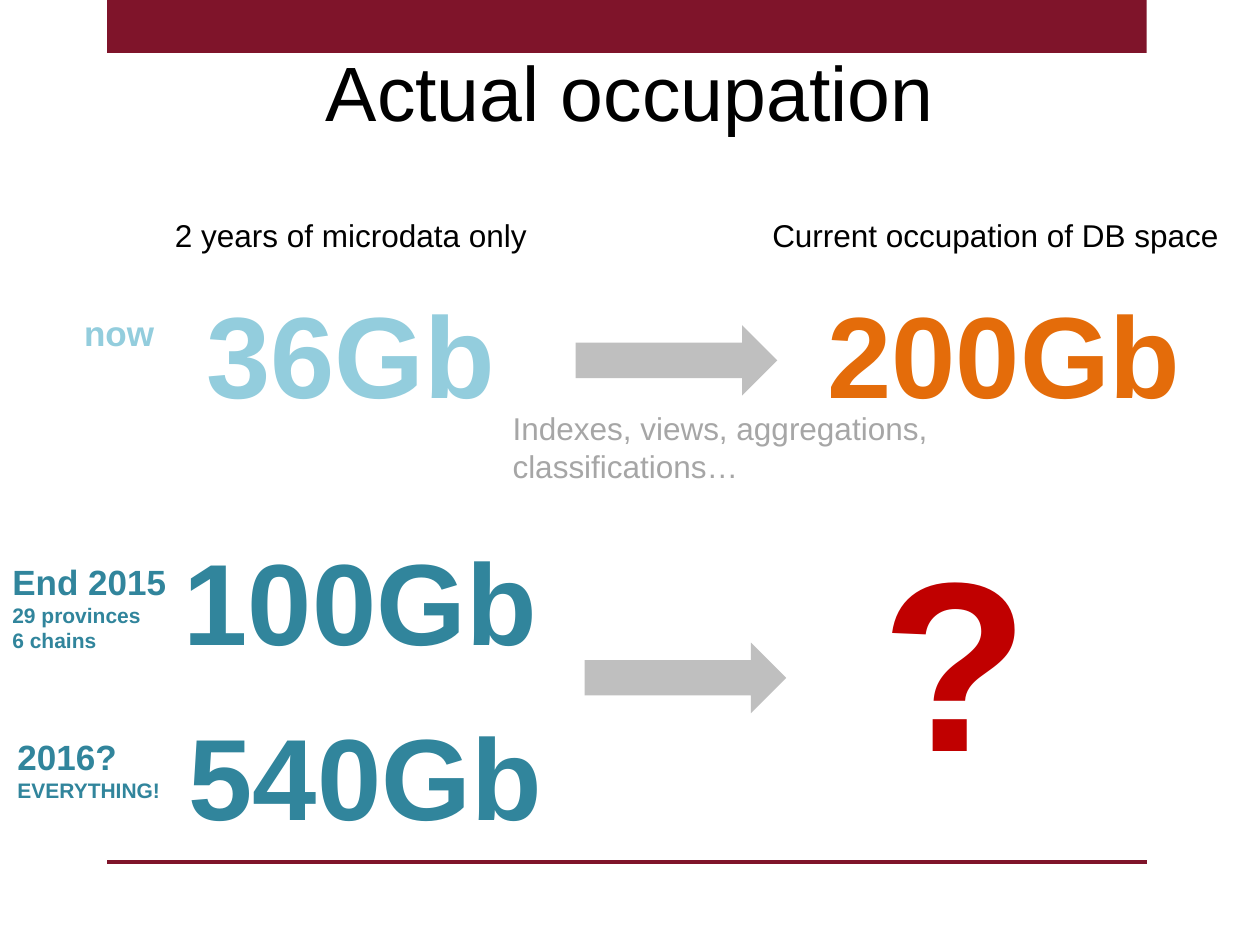
from dataclasses import dataclass

from lxml.etree import SubElement
from pptx import Presentation
from pptx.dml.color import RGBColor as Color
from pptx.enum.shapes import MSO_CONNECTOR as Connector, MSO_SHAPE as Preset
from pptx.enum.text import MSO_ANCHOR as Anchor, MSO_AUTO_SIZE as AutoSize, PP_ALIGN as Align
from pptx.oxml.ns import qn
from pptx.util import Pt

COLORS = {
    "black": "000000",
    "wine": "7F142A",
    "sky": "93CDDD",
    "teal": "31859C",
    "orange": "E46C0A",
    "red": "C00000",
    "silver": "BFBFBF",
    "gray": "A6A6A6",
}
BAND_LEFT, BAND_WIDTH = 61.2, 594


@dataclass(frozen=True)
class Line:
    text: str
    size: float


@dataclass(frozen=True)
class Label:
    left: float
    top: float
    width: float
    height: float
    lines: tuple[Line, ...]
    color: str
    bold: bool = True
    wrap: bool = False


LABELS = (
    Label(92.9, 120.2, 217.4, 28.8, (Line("2 years of microdata only", 18),), "black", False),
    Label(434.2, 120.2, 272.2, 28.8, (Line("Current occupation of DB space", 18),), "black", False),
    Label(110.9, 158.4, 181.4, 87.1, (Line("36Gb", 66),), "sky"),
    Label(465.8, 158.4, 218.2, 87.1, (Line("200Gb", 66),), "orange"),
    Label(97.9, 299.5, 218.2, 87.1, (Line("100Gb", 66),), "teal"),
    Label(100.8, 399.6, 218.2, 87.1, (Line("540Gb", 66),), "teal"),
    Label(41, 174.2, 54.7, 31.7, (Line("now", 20),), "sky"),
    Label(0, 316.8, 103, 60.5,
          (Line("End 2015", 20), Line("29 provinces", 12), Line("6 chains", 12)), "teal"),
    Label(2.9, 416.9, 97.2, 46.1, (Line("2016?", 20), Line("EVERYTHING!", 12)), "teal"),
    Label(496.8, 288, 90.7, 174.2, (Line("?", 138),), "red", wrap=True),
    Label(285.8, 230.4, 284.4, 51.1,
          (Line("Indexes, views, aggregations, classifications…", 18),), "gray", False, True),
)
ARROWS = ((329, 185.8), (334.1, 367.2))


def rgb(name: str) -> Color:
    return Color.from_string(COLORS[name])


def format_font(font, size: float, color: str, bold: bool) -> None:
    for name, value in {"name": "Arial", "size": Pt(size), "bold": bold}.items():
        setattr(font, name, value)
    font.color.rgb = rgb(color)


def place(shape, left: float, top: float, width: float, height: float) -> None:
    bounds = {"left": left, "top": top, "width": width, "height": height}
    for name, value in bounds.items():
        setattr(shape, name, Pt(value))


def add_title(slide, text: str) -> None:
    title = slide.shapes.title
    place(title, 36, 21.6, 648, 90)
    title.text_frame.vertical_anchor = Anchor.TOP
    para = title.text_frame.paragraphs[0]
    para.alignment = Align.CENTER
    span = para.add_run()
    span.text = text
    format_font(span.font, 44, "black", False)


def add_block(slide, preset: Preset, left: float, top: float,
              width: float, height: float, color: str) -> None:
    block = slide.shapes.add_shape(preset, Pt(left), Pt(top), Pt(width), Pt(height))
    block.shadow.inherit = False
    block.fill.solid()
    block.fill.fore_color.rgb = rgb(color)
    block.line.fill.background()


def add_rule(slide, top: float) -> None:
    rule = slide.shapes.add_connector(
        Connector.STRAIGHT, Pt(BAND_LEFT), Pt(top), Pt(BAND_LEFT + BAND_WIDTH), Pt(top))
    rule.line.color.rgb = rgb("wine")
    rule.line.width = Pt(2)
    SubElement(rule._element.spPr, qn("a:effectLst"))


def add_label(slide, label: Label) -> None:
    box = slide.shapes.add_textbox(
        Pt(label.left), Pt(label.top), Pt(label.width), Pt(label.height))
    frame = box.text_frame
    frame.word_wrap = label.wrap
    frame.auto_size = AutoSize.SHAPE_TO_FIT_TEXT
    for index, line in enumerate(label.lines):
        para = frame.add_paragraph() if index else frame.paragraphs[0]
        span = para.add_run()
        span.text = line.text
        format_font(span.font, line.size, label.color, label.bold)


def main() -> None:
    deck = Presentation()
    deck.slide_width, deck.slide_height = Pt(720), Pt(540)
    page = deck.slides.add_slide(deck.slide_layouts[5])
    add_block(page, Preset.RECTANGLE, BAND_LEFT, 0, BAND_WIDTH, 30.2, "wine")
    add_rule(page, 492.5)
    add_title(page, "Actual occupation")
    for left, top in ARROWS:
        add_block(page, Preset.RIGHT_ARROW, left, top, 115.2, 40.3, "silver")
    for label in LABELS:
        add_label(page, label)
    deck.save("out.pptx")


if __name__ == "__main__":
    main()
